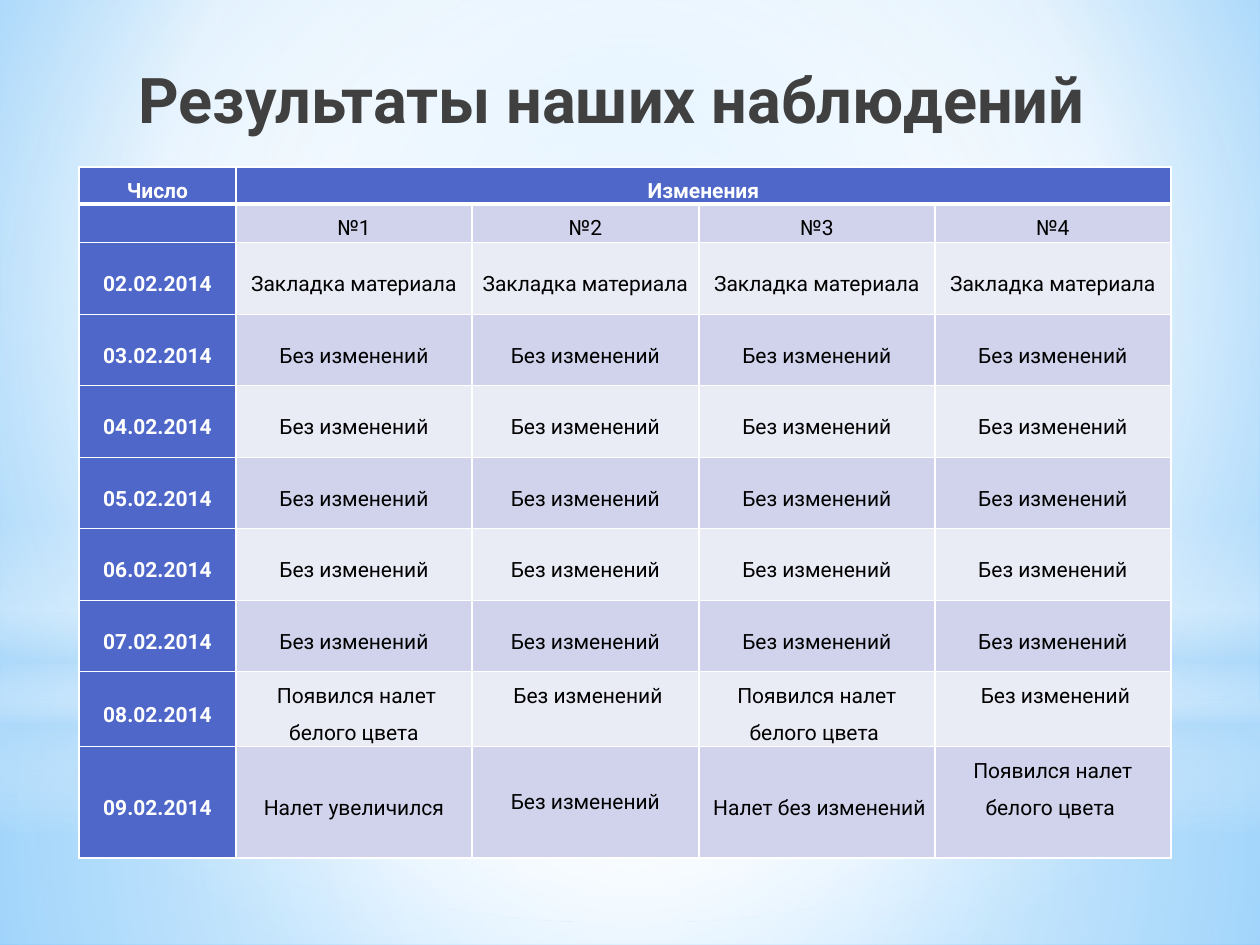
from dataclasses import dataclass

from lxml import etree
from pptx import Presentation
from pptx.dml.color import RGBColor
from pptx.enum.shapes import MSO_SHAPE
from pptx.enum.text import MSO_ANCHOR, PP_ALIGN
from pptx.oxml import parse_xml
from pptx.oxml.ns import qn
from pptx.util import Emu, Pt

RECT, OVAL = MSO_SHAPE.RECTANGLE, MSO_SHAPE.OVAL
TOP, MIDDLE = MSO_ANCHOR.TOP, MSO_ANCHOR.MIDDLE
CENTER = PP_ALIGN.CENTER
SCALE = 914400 // 126
NS = "http://schemas.openxmlformats.org/drawingml/2006/main"


@dataclass(frozen=True)
class Theme:
    font: str = "Roboto"
    title: int = 36
    body: int = 12
    dark: str = "404040"
    ink: str = "000000"
    white: str = "FFFFFF"
    head: str = "4E67C8"
    bands: tuple = ("D0D3EB", "E9EBF5")
    sky: str = "B4DCFA"
    pale: str = "9ED5FF"
    deep: str = "5BB9FF"


THEME = Theme()
SAME = "Без изменений"
START = "Закладка материала"
ROWS = [
    ["Число", "Изменения", "", "", ""],
    ["", "№1", "№2", "№3", "№4"],
    ["02.02.2014"] + [START] * 4,
    *[[f"0{day}.02.2014"] + [SAME] * 4 for day in range(3, 8)],
    ["08.02.2014", " Появился налет белого цвета", " " + SAME,
     "Появился налет белого цвета ", " " + SAME],
    ["09.02.2014", " Налет увеличился ", SAME,
     " Налет без изменений", "Появился налет белого цвета "],
]
WIDTHS = [157, 236, 227, 236, 236]
HEIGHTS = [36, 36] + [72, 71] * 3 + [75, 112]
HIGH = {(8, col) for col in range(1, 5)} | {(9, 4)}


def px(*sizes):
    return [Emu(size * SCALE) for size in sizes]


def blend(fill, props, stops, focus=None):
    """Fill with (position, colour, opacity) stops, round a focus or downwards."""
    fill.gradient()
    grad = etree.Element(qn("a:gradFill"), rotWithShape="1")
    gsl = etree.SubElement(grad, qn("a:gsLst"))
    for pos, color, alpha in stops:
        stop = etree.SubElement(gsl, qn("a:gs"), pos=str(pos * 1000))
        tint = etree.SubElement(stop, qn("a:srgbClr"), val=color)
        if alpha < 100:
            etree.SubElement(tint, qn("a:alpha"), val=str(alpha * 1000))
    if focus:
        way = etree.SubElement(grad, qn("a:path"), path="circle")
        sides = {side: str(part * 1000) for side, part in zip("ltrb", focus)}
        etree.SubElement(way, qn("a:fillToRect"), **sides)
    else:
        etree.SubElement(grad, qn("a:lin"), ang="5400000", scaled="0")
    props.replace(props.find(qn("a:gradFill")), grad)


def glow(slide, kind, box, stops, focus=None):
    shape = slide.shapes.add_shape(kind, *px(*box))
    shape.shadow.inherit = False
    shape.line.fill.background()
    blend(shape.fill, shape._element.spPr, stops, focus)


def add_sky(slide, box):
    x, y, w, h = box
    white, sky = THEME.white, THEME.sky
    mid = (50, 50, 50, 50)
    back = slide.background.fill
    back.gradient()
    blend(back, slide._element.cSld.bg.bgPr,
          [(0, THEME.pale, 100), (60, white, 100), (100, THEME.deep, 100)],
          (20, 10, 20, 60))
    glow(slide, RECT, (x, y + 703, w, h - 703),
         [(0, white, 91), (37, white, 76), (100, sky, 79)], mid)
    glow(slide, RECT, (x, y, w, 703),
         [(0, white, 89), (48, white, 62), (100, sky, 79)], mid)
    glow(slide, RECT, (x, y + 519, w, 315),
         [(0, white, 0), (29, white, 30), (45, sky, 40), (55, white, 26),
          (65, sky, 60), (100, white, 0)])
    glow(slide, OVAL, (x, y + 220, w, 703),
         [(0, white, 100), (56, white, 0)], mid)


def style(para, size, color, bold):
    para.alignment = CENTER
    font = para.font
    font.name, font.size, font.bold = THEME.font, Pt(size), bold
    font.color.rgb = RGBColor.from_string(color)


def add_title(slide, box):
    title = slide.shapes.title
    slide.shapes._spTree.append(title._element)
    title.left, title.top, title.width, title.height = px(*box)
    frame = title.text_frame
    frame.text = "Результаты наших наблюдений "
    frame.word_wrap = True
    frame.vertical_anchor = TOP
    frame.margin_top, = px(11)
    style(frame.paragraphs[0], THEME.title, THEME.dark, True)


def rule(cell, row):
    """Draw the white borders, thicker under the header row."""
    wide = {"T": 3 if row == 1 else 1, "B": 3 if row == 0 else 1}
    props = cell._tc.get_or_add_tcPr()
    for spot, side in enumerate("LRTB"):
        width = Pt(wide.get(side, 1))
        props.insert(spot, parse_xml(
            f'<a:ln{side} xmlns:a="{NS}" w="{width}"><a:solidFill>'
            f'<a:srgbClr val="{THEME.white}"/></a:solidFill></a:ln{side}>'))


def fill_cell(cell, row, col, text):
    head = row == 0 or col == 0
    color = THEME.head if head else THEME.bands[(row + 1) % 2]
    cell.fill.solid()
    cell.fill.fore_color.rgb = RGBColor.from_string(color)
    rule(cell, row)
    cell.margin_left, cell.margin_right = px(9, 9)
    cell.margin_top = cell.margin_bottom = 0
    cell.vertical_anchor = TOP if row < 2 or (row, col) in HIGH else MIDDLE
    if text:
        cell.text = text
        para = cell.text_frame.paragraphs[0]
        para.line_spacing = 1.5
        style(para, THEME.body, THEME.white if head else THEME.ink, head)


def add_log(slide, box):
    table = slide.shapes.add_table(len(ROWS), len(WIDTHS), *px(*box)).table
    for column, width in zip(table.columns, px(*WIDTHS)):
        column.width = width
    for line, height in zip(table.rows, px(*HEIGHTS)):
        line.height = height
    for row, texts in enumerate(ROWS):
        for col, text in enumerate(texts):
            fill_cell(table.cell(row, col), row, col, text)
    table.cell(0, 1).merge(table.cell(0, 4))
    table.cell(9, 2).margin_bottom, = px(12)


def main():
    deck = Presentation()
    deck.slide_width, deck.slide_height = px(1260, 945)
    slide = deck.slides.add_slide(deck.slide_layouts[5])
    add_sky(slide, (0, 0, 1260, 945))
    add_title(slide, (29, 49, 1181, 129))
    add_log(slide, (79, 167, sum(WIDTHS), sum(HEIGHTS)))
    deck.save("out.pptx")


if __name__ == "__main__":
    main()
